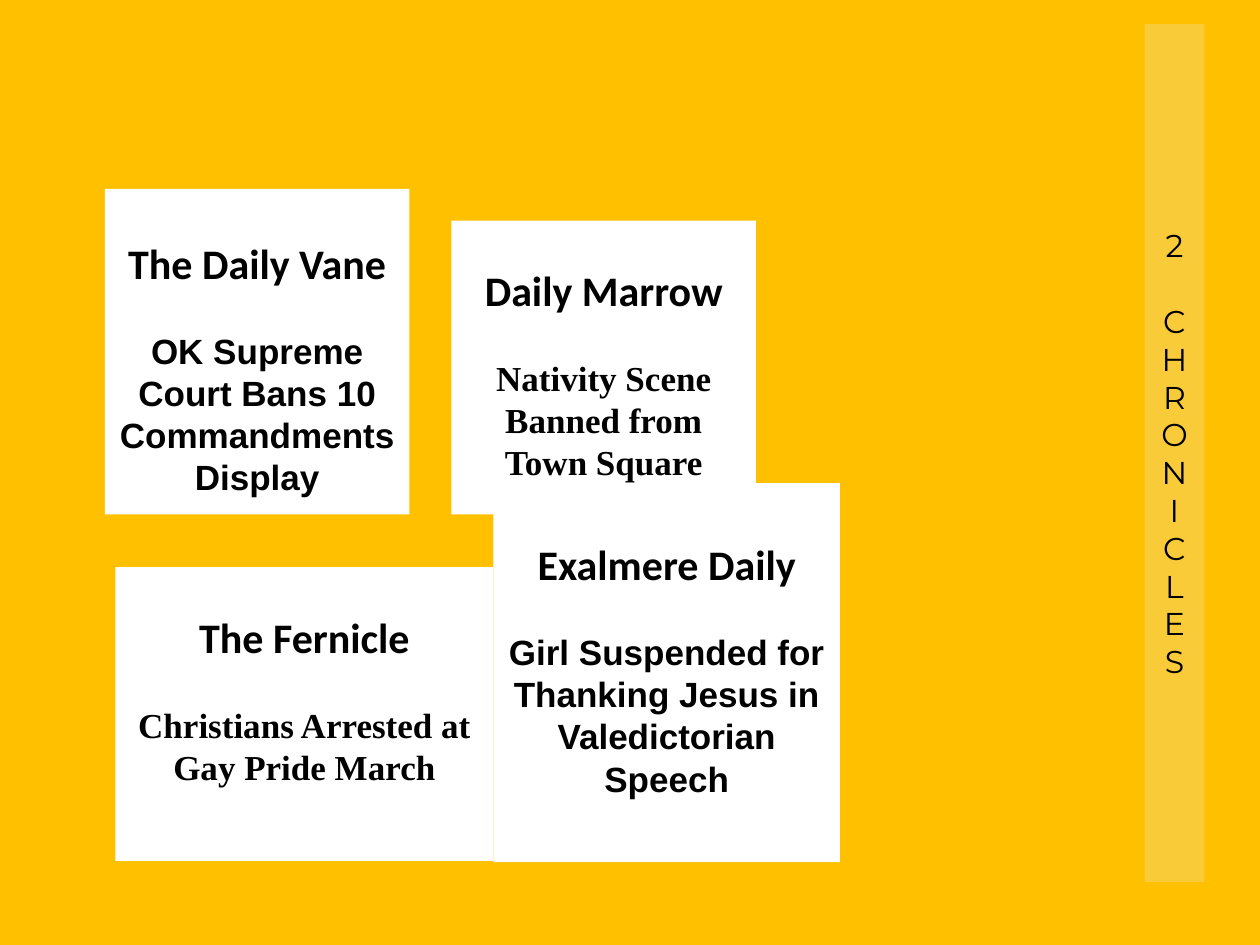
from lxml import etree
from pptx import Presentation
from pptx import util as u
from pptx.dml.color import RGBColor
from pptx.enum import shapes, text
from pptx.oxml.ns import qn

GOLD = RGBColor(0xFF, 0xC0, 0x00)
CREAM = RGBColor(0xEE, 0xEC, 0xE1)
WHITE = RGBColor(0xFF, 0xFF, 0xFF)
BLACK = RGBColor(0, 0, 0)

PAPERS = [
    ((10, 18, 29, 31), 4, "The Daily Vane", "Arial",
     "OK Supreme Court Bans 10 Commandments Display"),
    ((43, 21, 29, 28), 3.6, "Daily Marrow", "Times New Roman",
     "Nativity Scene Banned from Town Square"),
    ((11, 54, 36, 28), 3.6, "The Fernicle", "Times New Roman",
     "Christians Arrested at Gay Pride March"),
    ((47, 46, 33, 36.1), 4.7, "Exalmere Daily", "Arial",
     "Girl Suspended for Thanking Jesus in Valedictorian Speech"),
]


class Deck:
    """Draws on one slide with a grid of 120 columns by 90 rows."""

    def __init__(self):
        self.prs = Presentation()
        self.prs.slide_width, self.prs.slide_height = u.Inches(10), u.Inches(7.5)
        self.slide = self.prs.slides.add_slide(self.prs.slide_layouts[6])
        fill = self.slide.background.fill
        fill.solid()
        fill.fore_color.rgb = GOLD

    def grid(self, *cells):
        return [u.Inches(cell / 12) for cell in cells]

    def rect(self, home, box, color):
        shape = home.add_shape(shapes.MSO_SHAPE.RECTANGLE, *self.grid(*box))
        shape.shadow.inherit = False
        shape.fill.solid()
        shape.fill.fore_color.rgb = color
        shape.line.fill.background()
        return shape

    def style(self, para, font, size, bold=False):
        para.alignment = text.PP_ALIGN.CENTER
        run = para.runs[0].font
        run.name, run.size, run.bold = font, u.Pt(size), bold
        run.color.rgb = BLACK

    def banner(self, label):
        bar = self.rect(self.slide.shapes, (109, 2.3, 5.7, 81.7), CREAM)
        color = bar.fill._xPr.find(qn("a:solidFill"))[0]
        etree.SubElement(color, qn("a:alpha"), val="25000")
        frame = bar.text_frame
        frame.text = label
        frame.margin_left = frame.margin_right = u.Inches(0.03)
        frame.vertical_anchor = text.MSO_ANCHOR.MIDDLE
        frame._txBody.bodyPr.set("vert", "wordArtVert")
        para = frame.paragraphs[0]
        self.style(para, "Montserrat", 18)
        para.runs[0].font._element.set("spc", "1000")

    def paper(self, box, drop, title, font, story):
        group = self.slide.shapes.add_group_shape().shapes
        self.rect(group, box, WHITE)
        left, top, wide, high = box
        area = self.grid(left, top + drop, wide, high - drop)
        frame = group.add_textbox(*area).text_frame
        frame.word_wrap = True
        frame.text = f"{title}\n{story}"
        head, body = frame.paragraphs
        self.style(head, "Calibri", 24, True)
        self.style(body, font, 20, True)
        body.space_before = body.line_spacing = u.Pt(24)


def main():
    deck = Deck()
    deck.banner("2 CHRONICLES")
    for paper in PAPERS:
        deck.paper(*paper)
    deck.prs.save("out.pptx")


if __name__ == "__main__":
    main()
